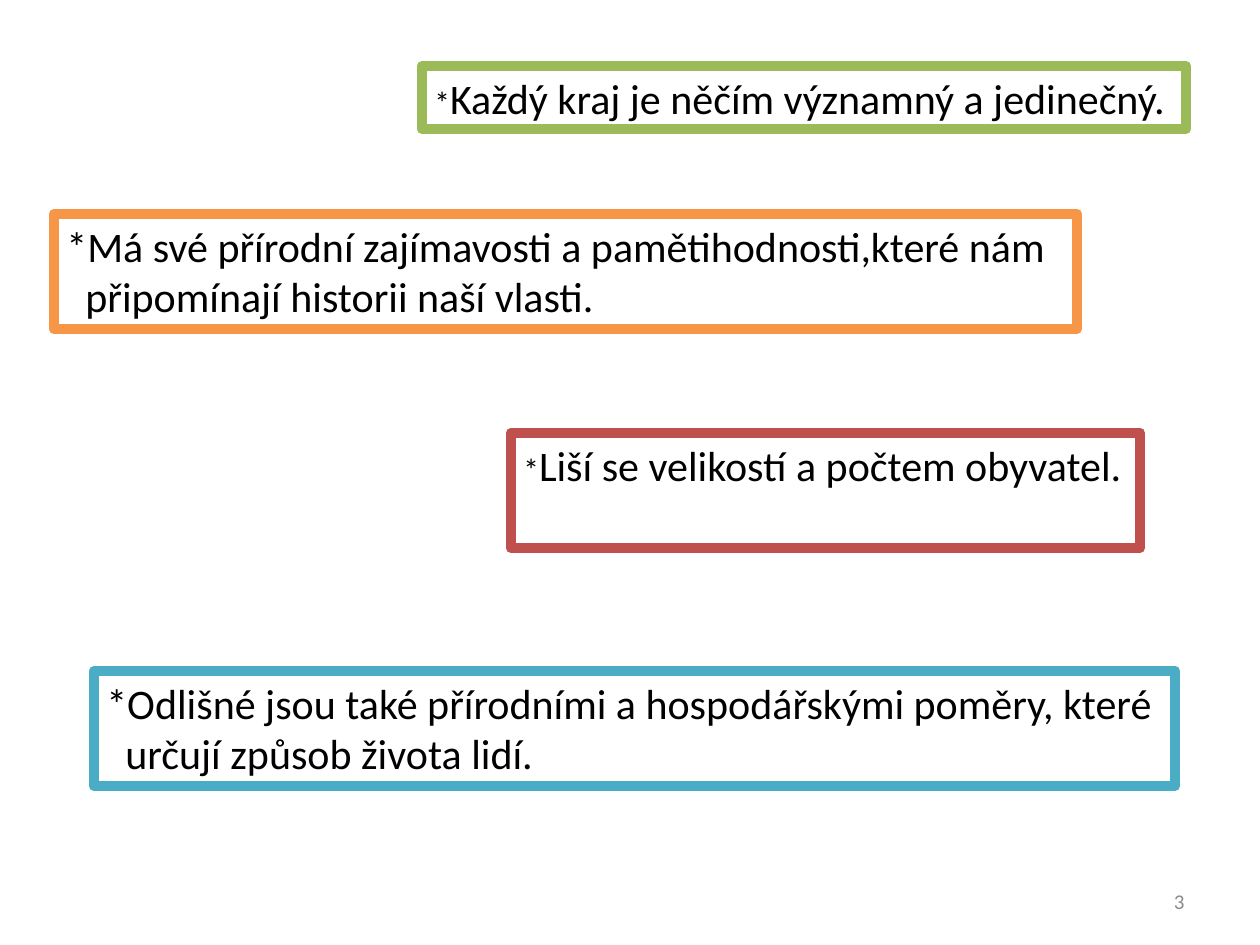
from pptx import Presentation
from pptx.dml.color import RGBColor
from pptx.enum.shapes import MSO_SHAPE
from pptx.enum.text import MSO_ANCHOR, PP_ALIGN
from pptx.util import Emu, Pt

RECT = MSO_SHAPE.RECTANGLE
TOP, MID = MSO_ANCHOR.TOP, MSO_ANCHOR.MIDDLE
LEFT, RIGHT = PP_ALIGN.LEFT, PP_ALIGN.RIGHT
SCALE = 914400 / 126
HANG = 19
COLORS = {
    "white": "FFFFFF", "black": "000000", "gray": "8C8C8C",
    "green": "9BBB59", "orange": "F79646", "red": "C0504D", "blue": "4BACC6",
}
BOXES = [
    ("red", (511, 433, 629, 115),
     [[("*", 18), ("Liší se velikostí a počtem obyvatel.", 24)]]),
    ("green", (422, 66, 764, 63),
     [[("*", 18), ("Každý kraj je něčím významný a jedinečný.", 24)]]),
    ("orange", (54, 214, 1023, 115),
     [[("*Má své přírodní zajímavosti a pamětihodnosti,které nám", 24)],
      [("připomínají historii naší vlasti.", 24)]]),
    ("blue", (94, 671, 1081, 115),
     [[("*Odlišné jsou také přírodními a hospodářskými poměry, které", 24)],
      [("určují způsob života lidí.", 24)]]),
]


def px(size):
    return Emu(round(size * SCALE))


def color(name):
    return RGBColor.from_string(COLORS[name])


def style(item, values):
    for name, value in values.items():
        setattr(item, name, value)


def write(shape, lines, tint, align, anchor):
    frame = shape.text_frame
    style(frame, {"word_wrap": True, "vertical_anchor": anchor})
    for row, runs in enumerate(lines):
        para = frame.add_paragraph() if row else frame.paragraphs[0]
        para.alignment = align
        if row:
            para._p.get_or_add_pPr().set("marL", str(px(HANG)))
        for text, size in runs:
            run = para.add_run()
            run.text = text
            style(run.font, {"name": "Calibri", "size": Pt(size)})
            run.font.color.rgb = color(tint)


def add_box(slide, tint, place, lines):
    box = slide.shapes.add_shape(RECT, *map(px, place))
    box.shadow.inherit = False
    box.fill.solid()
    box.fill.fore_color.rgb = color("white")
    box.line.color.rgb = color(tint)
    box.line.width = Pt(6)
    write(box, lines, "black", LEFT, TOP)


def add_number(slide, text):
    box = slide.shapes.add_textbox(*map(px, (903, 876, 294, 50)))
    write(box, [[(text, 12)]], "gray", RIGHT, MID)


def main():
    deck = Presentation()
    style(deck, {"slide_width": px(1260), "slide_height": px(945)})
    slide = deck.slides.add_slide(deck.slide_layouts.get_by_name("Blank"))
    add_number(slide, "3")
    for tint, place, lines in BOXES:
        add_box(slide, tint, place, lines)
    deck.save("out.pptx")


if __name__ == "__main__":
    main()
